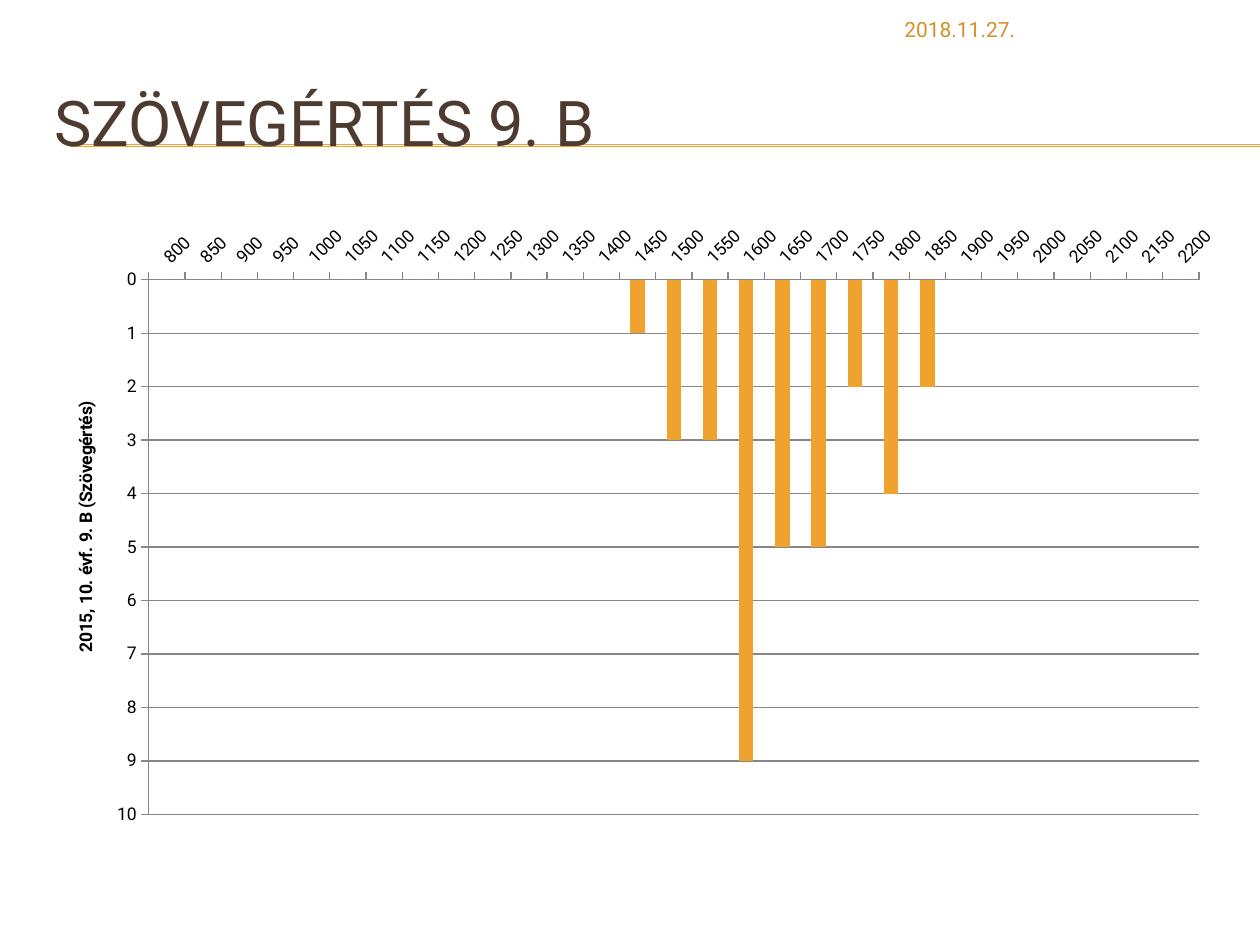
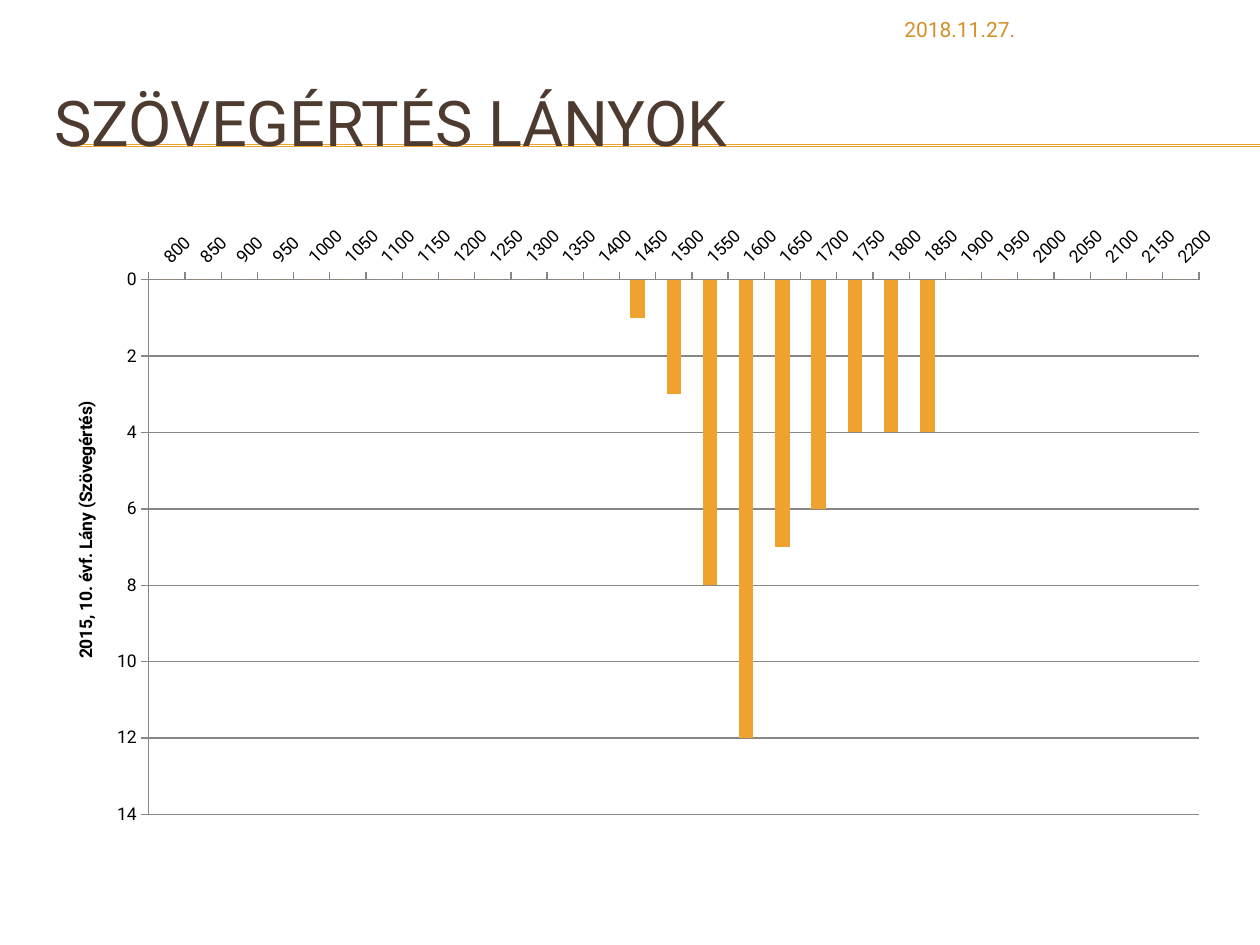
from dataclasses import dataclass

from lxml import etree
from pptx import Presentation
from pptx.chart.data import CategoryChartData
from pptx.dml.color import RGBColor
from pptx.enum.chart import XL_CHART_TYPE, XL_TICK_MARK
from pptx.enum.shapes import MSO_CONNECTOR
from pptx.enum.text import MSO_ANCHOR
from pptx.oxml.ns import qn
from pptx.util import Cm, Pt

COLUMNS = XL_CHART_TYPE.COLUMN_CLUSTERED
TICK_OUTSIDE = XL_TICK_MARK.OUTSIDE
STRAIGHT = MSO_CONNECTOR.STRAIGHT
MIDDLE, TOP = MSO_ANCHOR.MIDDLE, MSO_ANCHOR.TOP

DATE = "2018.11.27."
SCORES = range(800, 2201, 50)
RESULTS = [
    {
        "title": "SZÖVEGÉRTÉS 9. B",
        "axis_title": "2015, 10. évf. 9. B (Szövegértés)",
        "counts": {1450: 1, 1500: 3, 1550: 3, 1600: 9, 1650: 5,
                   1700: 5, 1750: 2, 1800: 4, 1850: 2},
        "axis_max": 10,
        "axis_step": 1,
    },
    {
        "title": "SZÖVEGÉRTÉS LÁNYOK",
        "axis_title": "2015, 10. évf. Lány (Szövegértés)",
        "counts": {1450: 1, 1500: 3, 1550: 8, 1600: 12, 1650: 7,
                   1700: 6, 1750: 4, 1800: 4, 1850: 4},
        "axis_max": 14,
        "axis_step": 2,
    },
]


@dataclass(frozen=True)
class Theme:
    font: str = "Roboto"
    accent: RGBColor = RGBColor(0xF0, 0xA2, 0x2E)
    title: RGBColor = RGBColor(0x4E, 0x3B, 0x30)
    date: RGBColor = RGBColor(0xD4, 0x8F, 0x29)
    grid: RGBColor = RGBColor(0x87, 0x87, 0x87)
    chart_text: RGBColor = RGBColor(0, 0, 0)
    title_size: Pt = Pt(36)
    date_size: Pt = Pt(12)
    chart_size: Pt = Pt(10)
    line_width: Pt = Pt(0.75)


THEME = Theme()

# Boxes are left, top, width, height in centimetres.
SLIDE_SIZE = (25.4, 19.05)
TITLE_BOX = (0.84, 1.27, 24.13, 2.34)
DATE_BOX = (17.98, 0.2, 6.99, 0.81)
CHART_BOX = (0.84, 4.32, 24.13, 12.57)
PLOT_BOX = (3.0, 5.64, 21.17, 10.78)
AXIS_TITLE_CORNER = (1.43, 8.02)
RULE_LEFT = 1.42
RULE_TOPS = (2.92, 2.95)


def add_rules(slide):
    for top in RULE_TOPS:
        rule = slide.shapes.add_connector(
            STRAIGHT, Cm(RULE_LEFT), Cm(top), Cm(SLIDE_SIZE[0]), Cm(top))
        rule.line.color.rgb = THEME.accent
        rule.line.width = THEME.line_width
        etree.SubElement(rule._element.spPr, qn("a:effectLst"))


def add_text(slide, place, text, size, color, anchor):
    box = slide.shapes.add_textbox(*map(Cm, place))
    frame = box.text_frame
    frame.word_wrap = True
    frame.vertical_anchor = anchor
    span = frame.paragraphs[0].add_run()
    span.text = text
    span.font.name = THEME.font
    span.font.size = size
    span.font.color.rgb = color


def place_in_chart(element, index, place, inner=False):
    """Give a chart part a manual layout from its place on the slide."""
    for old in element.findall(qn("c:layout")):
        element.remove(old)
    layout = etree.Element(qn("c:layout"))
    manual = etree.SubElement(layout, qn("c:manualLayout"))
    left, top, width, height = CHART_BOX
    offset = ((place[0] - left) / width, (place[1] - top) / height)
    extent = (place[2] / width, place[3] / height) if inner else ()
    settings = [("layoutTarget", "inner")] if inner else []
    settings += [("xMode", "edge"), ("yMode", "edge")]
    settings += zip("xywh", offset + extent)
    for name, value in settings:
        etree.SubElement(manual, qn(f"c:{name}")).set("val", str(value))
    element.insert(index, layout)


def style_line(line):
    line.color.rgb = THEME.grid
    line.width = THEME.line_width


def style_axis_title(axis, text):
    frame = axis.axis_title.text_frame
    span = frame.paragraphs[0].add_run()
    span.text = text
    span.font.name = THEME.font
    span.font.size = THEME.chart_size
    span.font.bold = True
    span.font.color.rgb = THEME.chart_text
    title = axis.axis_title._element
    body = title.find(".//" + qn("a:bodyPr"))
    body.set("rot", "-5400000")
    body.set("vert", "horz")
    place_in_chart(title, 1, AXIS_TITLE_CORNER)


def add_score_chart(slide, result):
    data = CategoryChartData()
    data.categories = [str(score) for score in SCORES]
    data.add_series("Series 1", [result["counts"].get(s, 0) for s in SCORES])
    chart = slide.shapes.add_chart(COLUMNS, *map(Cm, CHART_BOX), data).chart
    chart.has_title = False
    chart.has_legend = False
    chart.font.name = THEME.font
    chart.font.size = THEME.chart_size
    chart.font.color.rgb = THEME.chart_text

    plot = chart.plots[0]
    plot.gap_width = 150
    plot.vary_by_categories = False
    fill = plot.series[0].format.fill
    fill.solid()
    fill.fore_color.rgb = THEME.accent

    scores, counts = chart.category_axis, chart.value_axis
    for axis in (scores, counts):
        axis.major_tick_mark = TICK_OUTSIDE
        style_line(axis.format.line)
    scores.tick_labels.font.size = THEME.chart_size
    labels = scores._element.find(qn("c:txPr"))
    labels.find(qn("a:bodyPr")).set("rot", "-2700000")

    counts.reverse_order = True
    counts.minimum_scale = 0
    counts.maximum_scale = result["axis_max"]
    counts.major_unit = result["axis_step"]
    counts.has_major_gridlines = True
    style_line(counts.major_gridlines.format.line)
    style_axis_title(counts, result["axis_title"])
    plot_area = chart._chartSpace.find(".//" + qn("c:plotArea"))
    place_in_chart(plot_area, 0, PLOT_BOX, inner=True)


def main():
    deck = Presentation()
    deck.slide_width, deck.slide_height = map(Cm, SLIDE_SIZE)
    blank = deck.slide_layouts[6]
    for result in RESULTS:
        slide = deck.slides.add_slide(blank)
        add_rules(slide)
        add_text(slide, TITLE_BOX, result["title"],
                 THEME.title_size, THEME.title, MIDDLE)
        add_text(slide, DATE_BOX, DATE, THEME.date_size, THEME.date, TOP)
        add_score_chart(slide, result)
    deck.save("out.pptx")


if __name__ == "__main__":
    main()
